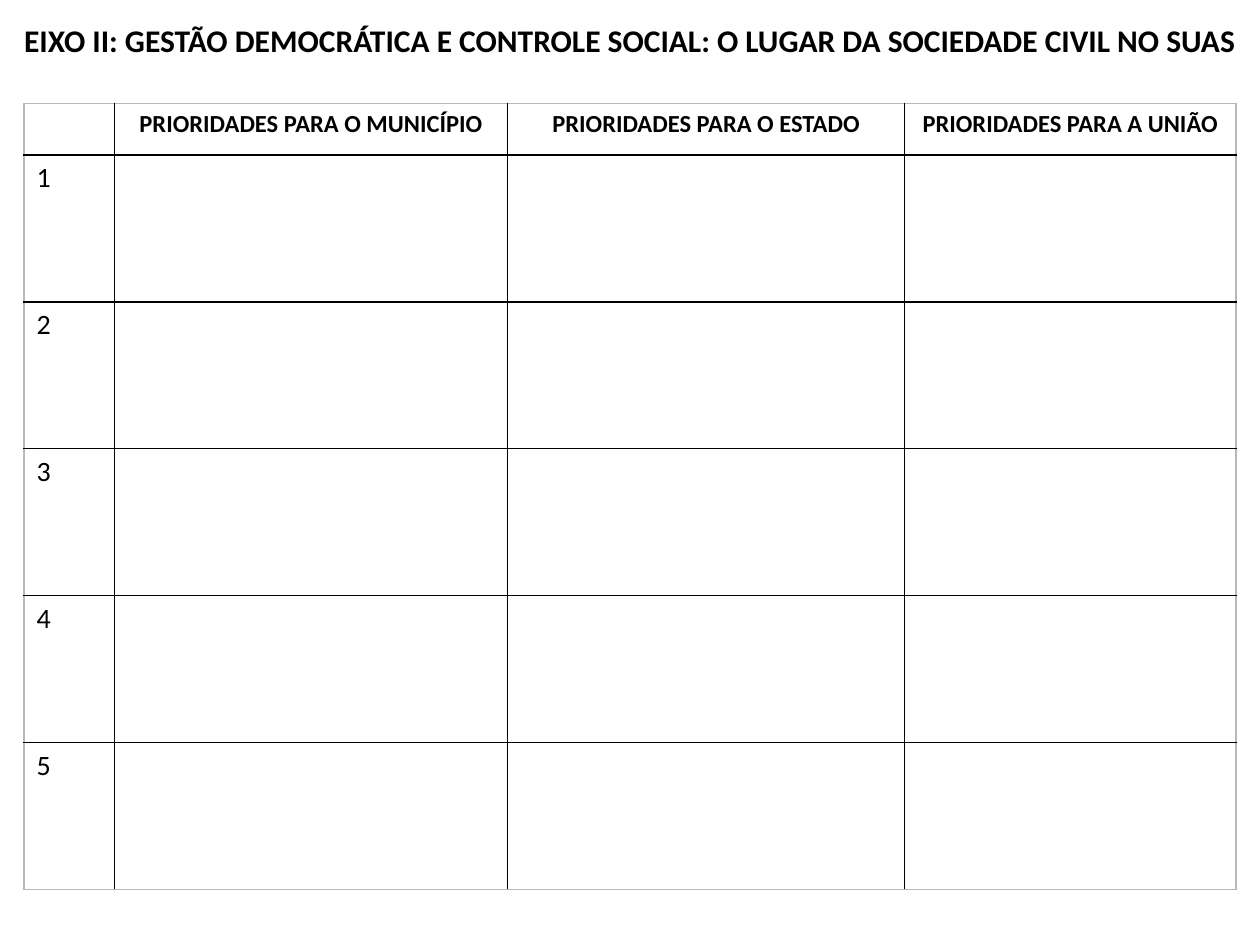
from lxml import etree
from pptx import Presentation, util as u
from pptx.dml.color import RGBColor
from pptx.enum.text import PP_ALIGN
from pptx.oxml.ns import qn

TITLE = "EIXO II: GESTÃO DEMOCRÁTICA E CONTROLE SOCIAL: O LUGAR DA SOCIEDADE CIVIL NO SUAS"
HEADERS = ["", "PRIORIDADES PARA O MUNICÍPIO", "PRIORIDADES PARA O ESTADO",
           "PRIORIDADES PARA A UNIÃO"]
PRIORITIES = 5
ROWS = [HEADERS] + [[str(n), "", "", ""] for n in range(1, PRIORITIES + 1)]

BLACK = RGBColor(0, 0, 0)
GRAY = RGBColor(0xB8, 0xB8, 0xB8)

SLIDE_WIDTH, SLIDE_HEIGHT = 10, 7.5
TABLE_LEFT, TABLE_TOP, TABLE_HEIGHT = 0.19, 0.82, 6.24
COLUMN_WIDTHS = [0.72, 3.12, 3.15, 2.63]
HEADER_HEIGHT = 0.41
ROW_HEIGHT = (TABLE_HEIGHT - HEADER_HEIGHT) / PRIORITIES

TITLE_FONT = {"name": "Calibri", "size": u.Pt(18), "bold": True}
HEADER_FONT = {"name": "Calibri", "size": u.Pt(14), "bold": True}
NUMBER_FONT = {"name": "Calibri", "size": u.Pt(16), "bold": False}


def write(frame, content, font, alignment):
    paragraph = frame.paragraphs[0]
    paragraph.alignment = alignment
    run = paragraph.add_run()
    run.text = content
    for name, value in font.items():
        setattr(run.font, name, value)
    run.font.color.rgb = BLACK


def set_borders(cell, row, column):
    """Gray on the outer edge of the table, black inside."""
    outer = {"a:lnL": column == 0, "a:lnR": column == len(HEADERS) - 1,
             "a:lnT": row == 0, "a:lnB": row == len(ROWS) - 1}
    properties = cell._tc.get_or_add_tcPr()
    for tag, is_outer in outer.items():
        line = etree.SubElement(properties, qn(tag), w=str(u.Pt(1)))
        fill = etree.SubElement(line, qn("a:solidFill"))
        etree.SubElement(fill, qn("a:srgbClr"), val=str(GRAY if is_outer else BLACK))


def add_title(slide):
    box = slide.shapes.add_textbox(0, u.Inches(0.12), u.Inches(SLIDE_WIDTH), u.Inches(0.4))
    box.text_frame.word_wrap = True
    write(box.text_frame, TITLE, TITLE_FONT, PP_ALIGN.CENTER)


def add_priorities(slide):
    table = slide.shapes.add_table(
        len(ROWS), len(HEADERS), u.Inches(TABLE_LEFT), u.Inches(TABLE_TOP),
        u.Inches(sum(COLUMN_WIDTHS)), u.Inches(TABLE_HEIGHT)).table
    table.first_row = table.horz_banding = False
    for column, width in zip(table.columns, COLUMN_WIDTHS):
        column.width = u.Inches(width)
    for r, row in enumerate(ROWS):
        table.rows[r].height = u.Inches(ROW_HEIGHT if r else HEADER_HEIGHT)
        for c, content in enumerate(row):
            cell = table.cell(r, c)
            set_borders(cell, r, c)
            cell.fill.background()
            if content:
                write(cell.text_frame, content, NUMBER_FONT if r else HEADER_FONT,
                      PP_ALIGN.LEFT if r else PP_ALIGN.CENTER)


def main():
    presentation = Presentation()
    presentation.slide_width = u.Inches(SLIDE_WIDTH)
    presentation.slide_height = u.Inches(SLIDE_HEIGHT)
    slide = presentation.slides.add_slide(presentation.slide_layouts[6])
    add_title(slide)
    add_priorities(slide)
    presentation.save("out.pptx")


if __name__ == "__main__":
    main()
